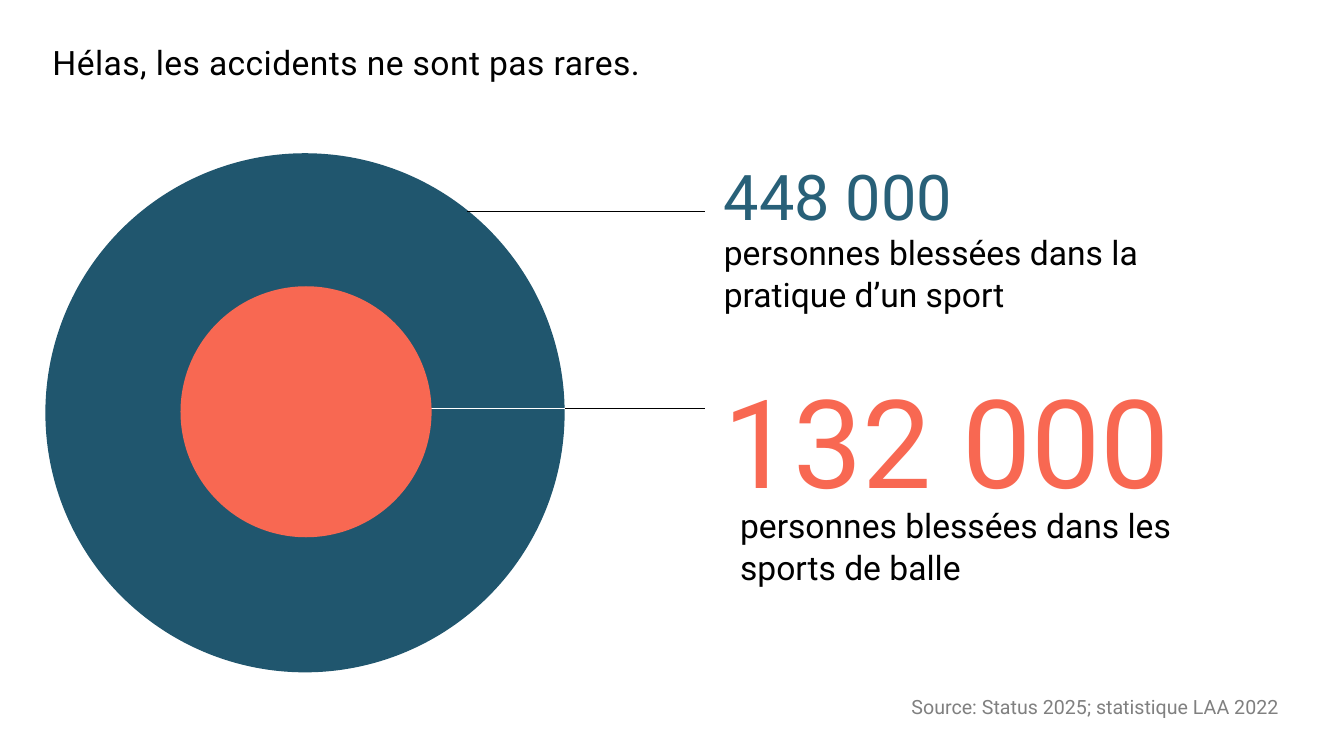
"""Slide on sports injuries: two nested circles with labelled figures."""
from dataclasses import dataclass

from lxml import etree
from pptx import Presentation
from pptx.dml.color import RGBColor
from pptx.enum import shapes, text
from pptx.oxml.ns import qn
from pptx.util import Inches, Pt

COLORS = {
    "black": "000000",
    "white": "FFFFFF",
    "blue": "20566E",
    "figure_blue": "286078",
    "coral": "F86852",
    "gray": "808080",
}
FONT = "Roboto"


@dataclass
class Circle:
    left: float
    top: float
    diameter: float
    color: str


@dataclass
class Leader:
    x1: float
    x2: float
    y: float
    color: str


@dataclass
class Label:
    text: str
    left: float
    top: float
    width: float
    height: float
    size: float = 24
    color: str = "black"
    spacing: float = 0


TOTAL = Circle(0.45, 1.52, 5.15, "blue")
BALL_SPORTS = Circle(1.79, 2.84, 2.49, "coral")

LEADERS = [
    Leader(4.63, 6.99, 2.1, "black"),
    Leader(5.6, 6.99, 4.05, "black"),
    Leader(3.07, 5.6, 4.05, "white"),
]

LABELS = [
    Label("Hélas, les accidents ne sont pas rares.", 0.52, 0.4, 12.28, 0.35, spacing=0.3),
    Label("448 000", 7.18, 1.52, 3.3, 0.78, size=45, color="figure_blue"),
    Label("personnes blessées dans la pratique d’un sport", 7.18, 2.28, 4.23, 0.84),
    Label("132 000", 7.18, 3.55, 5.86, 1.52, size=88, color="coral"),
    Label("personnes blessées dans les sports de balle", 7.34, 4.99, 4.69, 0.84),
    Label("Source: Status 2025; statistique LAA 2022", 9.04, 6.88, 4.1, 0.24,
          size=14, color="gray"),
]


def rgb(name: str) -> RGBColor:
    return RGBColor.from_string(COLORS[name])


def add_circle(s, circle: Circle) -> None:
    sp = s.shapes.add_shape(
        shapes.MSO_SHAPE.OVAL, Inches(circle.left), Inches(circle.top),
        Inches(circle.diameter), Inches(circle.diameter))
    sp.shadow.inherit = False
    sp.fill.solid()
    sp.fill.fore_color.rgb = rgb(circle.color)
    sp.line.fill.background()


def add_leader(s, leader: Leader) -> None:
    cxn = s.shapes.add_connector(
        shapes.MSO_CONNECTOR.STRAIGHT, Inches(leader.x1), Inches(leader.y),
        Inches(leader.x2), Inches(leader.y))
    cxn.line.color.rgb = rgb(leader.color)
    cxn.line.width = Pt(1)
    etree.SubElement(cxn._element.spPr, qn("a:effectLst"))


def write_text(tf, content: str, *, size: float, color: str, spacing: float = 0) -> None:
    p = tf.paragraphs[0]
    p.line_spacing = 1.05
    r = p.add_run()
    r.text = content
    r.font.name = FONT
    r.font.size = Pt(size)
    r.font.color.rgb = rgb(color)
    if spacing:
        r.font._element.set("spc", str(round(spacing * 100)))


def add_label(s, label: Label) -> None:
    sp = s.shapes.add_textbox(
        Inches(label.left), Inches(label.top), Inches(label.width), Inches(label.height))
    tf = sp.text_frame
    tf.word_wrap = True
    tf.auto_size = text.MSO_AUTO_SIZE.SHAPE_TO_FIT_TEXT
    tf.margin_left = tf.margin_right = tf.margin_top = tf.margin_bottom = 0
    write_text(tf, label.text, size=label.size, color=label.color, spacing=label.spacing)


def main() -> None:
    prs = Presentation()
    prs.slide_width, prs.slide_height = Inches(13.33), Inches(7.5)
    s = prs.slides.add_slide(prs.slide_layouts[6])
    add_circle(s, TOTAL)
    for leader in LEADERS:
        add_leader(s, leader)
    for label in LABELS:
        add_label(s, label)
    add_circle(s, BALL_SPORTS)
    prs.save("out.pptx")


if __name__ == "__main__":
    main()
